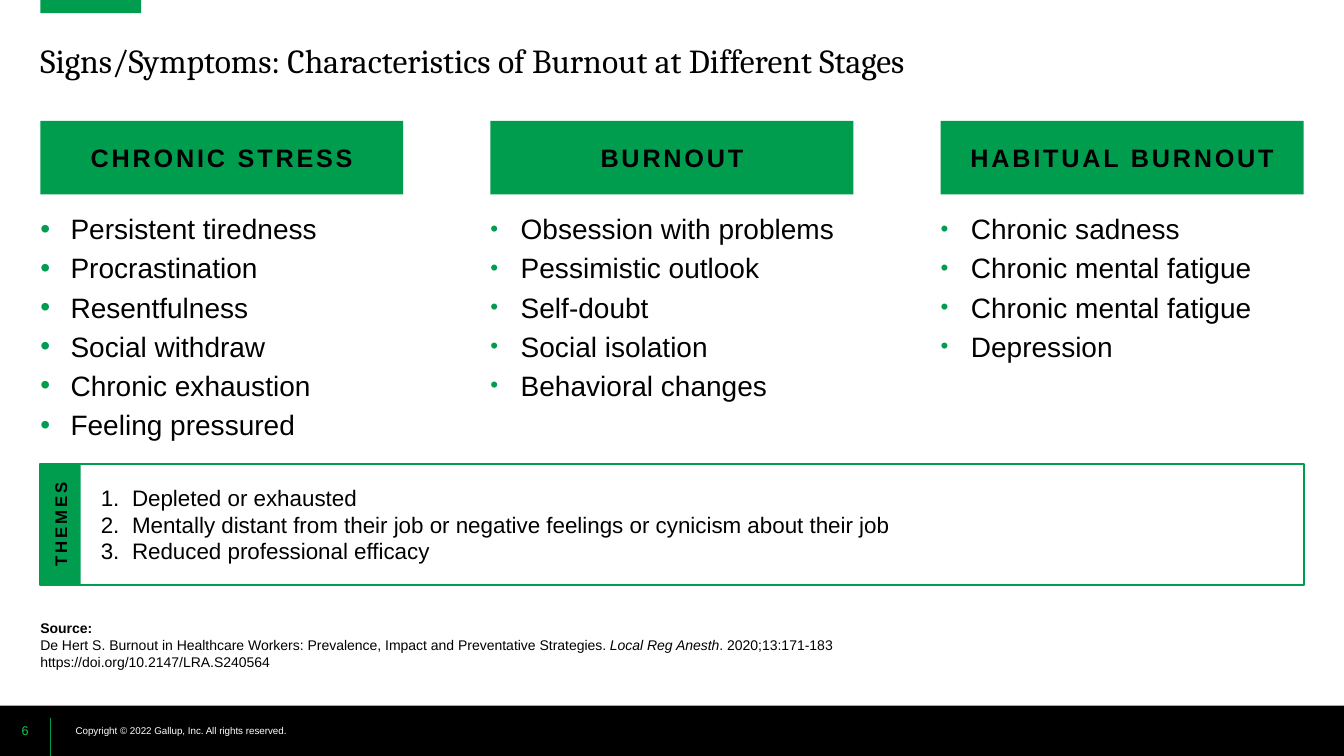
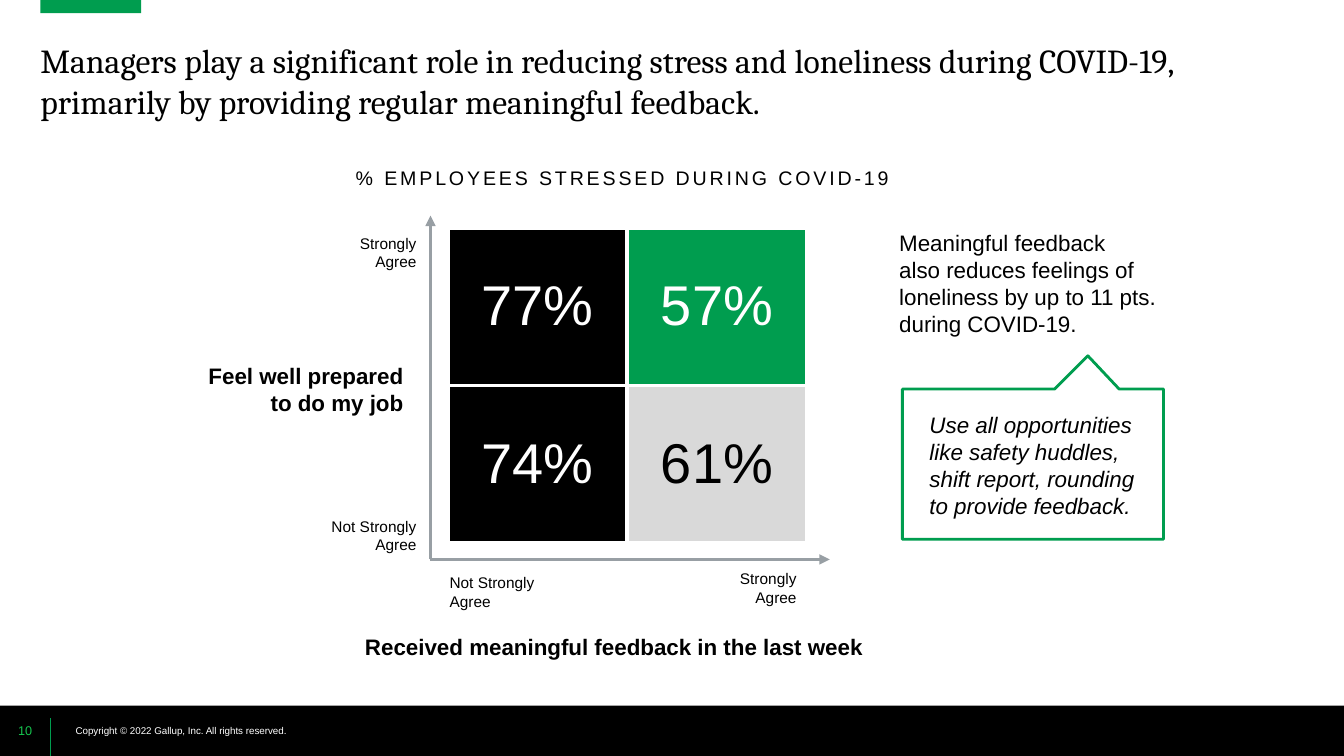
from dataclasses import dataclass

from lxml import etree
from pptx import Presentation
from pptx.dml.color import RGBColor
from pptx.enum.shapes import MSO_CONNECTOR, MSO_SHAPE
from pptx.enum.text import MSO_ANCHOR as Anchor, MSO_AUTO_SIZE as AutoSize, PP_ALIGN as Align
from pptx.oxml.ns import qn
from pptx.util import Inches, Pt


# Colours, fonts and type sizes
@dataclass(frozen=True)
class Theme:
    green: RGBColor = RGBColor(0x00, 0x9D, 0x4F)
    bright_green: RGBColor = RGBColor(0x16, 0xC6, 0x4F)
    black: RGBColor = RGBColor(0x00, 0x00, 0x00)
    white: RGBColor = RGBColor(0xFF, 0xFF, 0xFF)
    pale_grey: RGBColor = RGBColor(0xD9, 0xD9, 0xD9)
    axis_grey: RGBColor = RGBColor(0x98, 0x9F, 0xA4)
    heading_font: str = "Cambria"
    body_font: str = "Arial"
    title: int = 24
    figure: int = 40
    bullet: int = 20
    header: int = 18
    body: int = 16
    caption: int = 14
    tag: int = 12
    axis: int = 11
    source: int = 10
    number: int = 9
    copyright: int = 7


THEME = Theme()
WIDTH, HEIGHT = 13.33, 7.5
MARGIN, CONTENT_WIDTH = 0.4, 12.53
FOOTER_TOP, FOOTER_HEIGHT = 7, 0.5
NO_INSETS = (0, 0, 0, 0)


def add_xml(parent, tag, **attributes):
    child = etree.SubElement(parent, qn(tag))
    for key, value in attributes.items():
        child.set(key, str(value))
    return child


class Deck:
    """Holds the style and the current slide."""

    def __init__(self, theme):
        self.theme = theme
        self.prs = Presentation()
        self.prs.slide_width, self.prs.slide_height = Inches(WIDTH), Inches(HEIGHT)
        self.slide = None

    # Shared frame: accent tab, title and footer
    def new_slide(self, title, number):
        t = self.theme
        self.slide = self.prs.slides.add_slide(self.prs.slide_layouts[5])
        self.box((0, FOOTER_TOP, WIDTH, FOOTER_HEIGHT), t.black)
        self.text((0.75, FOOTER_TOP, 2.25, FOOTER_HEIGHT),
                  ["Copyright © 2022 Gallup, Inc. All rights reserved."], t.copyright,
                  anchor=Anchor.MIDDLE, insets=NO_INSETS, color=t.white)
        self.line((0.5, HEIGHT), (0.5, 7.12), t.green, 0.75)
        self.box((MARGIN, 0, 1, 0.13), t.green)
        heading = self.slide.shapes.title
        place = dict(left=MARGIN, top=0.4, width=CONTENT_WIDTH, height=0.4)
        for key, value in place.items():
            setattr(heading, key, Inches(value))
        self.fill_text(heading.text_frame, [title], t.title,
                       insets=NO_INSETS, name=t.heading_font)
        self.text((0, FOOTER_TOP, 0.5, FOOTER_HEIGHT), [number], t.number,
                  align=Align.CENTER, anchor=Anchor.MIDDLE, insets=NO_INSETS,
                  color=t.bright_green)

    # Text: each paragraph is a string or a list of (string, format) runs
    def fill_text(self, frame, paragraphs, size, align=Align.LEFT, anchor=Anchor.TOP,
                  insets=(0.1, 0.05, 0.1, 0.05), bullet=None, after=0, **fmt):
        frame.word_wrap = True
        frame.auto_size = AutoSize.NONE
        frame.vertical_anchor = anchor
        for side, inset in zip(("left", "top", "right", "bottom"), insets):
            setattr(frame, f"margin_{side}", Inches(inset))
        for index, content in enumerate(paragraphs):
            paragraph = frame.add_paragraph() if index else frame.paragraphs[0]
            self.fill_paragraph(paragraph, content, size, align, **fmt)
            if after:
                paragraph.space_after = Pt(after)
            if bullet:
                bullet(paragraph)

    def fill_paragraph(self, paragraph, content, size, align, **fmt):
        paragraph.alignment = align
        runs = [(content, {})] if isinstance(content, str) else content
        for words, own in runs:
            for index, line in enumerate(words.split("\n")):
                if index:
                    paragraph.add_line_break()
                run = paragraph.add_run()
                run.text = line
                self.format_run(run, size=Pt(size), **{**fmt, **own})

    def format_run(self, run, color=None, spacing=0, **fmt):
        values = {"name": self.theme.body_font, **fmt}
        for key, value in values.items():
            setattr(run.font, key, value)
        run.font.color.rgb = self.theme.black if color is None else color
        if spacing:
            run._r.get_or_add_rPr().set("spc", str(spacing * 100))

    def indent(self, paragraph, inches):
        properties = paragraph._p.get_or_add_pPr()
        properties.set("marL", str(Inches(inches)))
        properties.set("indent", str(-Inches(inches)))
        return properties

    def dots(self, percent):
        def apply(paragraph):
            properties = self.indent(paragraph, 0.3)
            add_xml(add_xml(properties, "a:buClr"), "a:srgbClr", val=self.theme.green)
            add_xml(properties, "a:buSzPct", val=percent * 1000)
            add_xml(properties, "a:buFont", typeface=self.theme.body_font)
            add_xml(properties, "a:buChar", char="•")
        return apply

    def numbers(self, paragraph):
        properties = self.indent(paragraph, 0.31)
        add_xml(properties, "a:buFont", typeface=self.theme.body_font)
        add_xml(properties, "a:buAutoNum", type="arabicPeriod")

    def text(self, at, paragraphs, size, **options):
        frame = self.slide.shapes.add_textbox(*map(Inches, at)).text_frame
        self.fill_text(frame, paragraphs, size, **options)

    # Shapes and lines
    def box(self, at, fill, outline=None, rotation=0):
        shape = self.slide.shapes.add_shape(MSO_SHAPE.RECTANGLE, *map(Inches, at))
        shape.rotation = rotation
        return self.paint(shape, fill, outline, 1.5)

    def paint(self, shape, fill, outline, weight):
        shape.shadow.inherit = False
        if fill is None:
            shape.fill.background()
        else:
            shape.fill.solid()
            shape.fill.fore_color.rgb = fill
        if outline is None:
            shape.line.fill.background()
        else:
            shape.line.color.rgb = outline
            shape.line.width = Pt(weight)
        return shape

    def label_box(self, at, label, size, rotation=0):
        shape = self.box(at, self.theme.green, rotation=rotation)
        self.fill_text(shape.text_frame, [label], size, align=Align.CENTER,
                       anchor=Anchor.MIDDLE, bold=True, spacing=2)

    def line(self, start, end, color, weight, arrow=False):
        connector = self.slide.shapes.add_connector(
            MSO_CONNECTOR.STRAIGHT, *map(Inches, (*start, *end)))
        connector.line.color.rgb = color
        connector.line.width = Pt(weight)
        if arrow:
            add_xml(connector.line._get_or_add_ln(), "a:tailEnd", type="triangle")
        add_xml(connector._element.spPr, "a:effectLst")

    def outline(self, points, color, weight):
        start, *rest = [tuple(map(Inches, point)) for point in points]
        builder = self.slide.shapes.build_freeform(*start, scale=1.0)
        builder.add_line_segments(rest, close=True)
        self.paint(builder.convert_to_shape(), None, color, weight)

    # Table of large figures with white gaps between cells
    def matrix(self, at, rows):
        table = self.slide.shapes.add_table(
            len(rows), len(rows[0]), *map(Inches, at)).table
        for flag in ("first_row", "horz_banding"):
            setattr(table, flag, False)
        for row_index, row in enumerate(rows):
            for column_index, (figure, fill, color) in enumerate(row):
                cell = table.cell(row_index, column_index)
                self.cell_borders(cell)
                cell.fill.solid()
                cell.fill.fore_color.rgb = fill
                cell.vertical_anchor = Anchor.MIDDLE
                self.fill_paragraph(cell.text_frame.paragraphs[0], figure,
                                    self.theme.figure, Align.CENTER, color=color)

    def cell_borders(self, cell):
        properties = cell._tc.get_or_add_tcPr()
        for side in "LRTB":
            border = add_xml(properties, f"a:ln{side}", w=Pt(3))
            add_xml(add_xml(border, "a:solidFill"), "a:srgbClr", val=self.theme.white)


def burnout_stages(deck):
    t = deck.theme
    deck.new_slide("Signs/Symptoms: Characteristics of Burnout at Different Stages", "6")

    # Stage columns
    stages = [
        ("CHRONIC STRESS", 100, ["Persistent tiredness", "Procrastination", "Resentfulness",
                                 "Social withdraw", "Chronic exhaustion", "Feeling pressured"]),
        ("BURNOUT", 80, ["Obsession with problems", "Pessimistic outlook", "Self-doubt",
                         "Social isolation", "Behavioral changes"]),
        ("HABITUAL BURNOUT", 80, ["Chronic sadness", "Chronic mental fatigue",
                                  "Chronic mental fatigue", "Depression"]),
    ]
    stage_width = 3.6
    step = (CONTENT_WIDTH - stage_width) / (len(stages) - 1)
    for index, (stage, dot_percent, symptoms) in enumerate(stages):
        left = MARGIN + index * step
        deck.label_box((left, 1.2, stage_width, 0.73), stage, t.header)
        deck.text((left, 2.1, stage_width, 2.23), symptoms, t.bullet,
                  insets=NO_INSETS, bullet=deck.dots(dot_percent), after=4)

    # Source
    citation = [
        ("De Hert S. Burnout in Healthcare Workers: Prevalence, Impact and "
         "Preventative Strategies. ", {}),
        ("Local Reg Anesth", {"italic": True}),
        (". 2020;13:171-183\nhttps://doi.org/10.2147/LRA.S240564", {}),
    ]
    deck.text((MARGIN, 6.15, CONTENT_WIDTH, 0.5), [[("Source:", {"bold": True})], citation],
              t.source, anchor=Anchor.BOTTOM, insets=NO_INSETS)

    # Themes panel with its upright tag
    top, height, tag = 4.6, 1.2, 0.4
    panel = deck.box((MARGIN, top, CONTENT_WIDTH, height), t.white, t.green)
    themes = ["Depleted or exhausted",
              "Mentally distant from their job or negative feelings or cynicism about their job",
              "Reduced professional efficacy"]
    deck.fill_text(panel.text_frame, themes, t.body, anchor=Anchor.MIDDLE,
                   insets=(0.6, 0.2, 0.25, 0.2), bullet=deck.numbers)
    deck.label_box((MARGIN + (tag - height) / 2, top + (height - tag) / 2, height, tag),
                   "THEMES", t.tag, rotation=270)


def manager_feedback(deck):
    t = deck.theme
    deck.new_slide("Managers play a significant role in reducing stress and loneliness during "
                   "COVID-19, primarily by providing regular meaningful feedback.", "10")

    # Stress matrix and its axes
    deck.text((3.43, 1.6, 5.7, 0.34), ["% EMPLOYEES STRESSED DURING COVID-19"],
              t.caption, spacing=2)
    deck.matrix((4.44, 2.26, 3.56, 3.13), [
        [("77%", t.black, t.white), ("57%", t.green, t.white)],
        [("74%", t.black, t.white), ("61%", t.pale_grey, t.black)],
    ])
    origin = (4.27, 5.55)
    for axis_end in ((8.23, 5.55), (4.27, 2.14)):
        deck.line(origin, axis_end, t.axis_grey, 2.5, arrow=True)

    # Axis ends and names
    axis_ends = [
        ((3.09, 2.27, 1.14, 0.47), "Strongly Agree", Align.RIGHT),
        ((3.16, 5.08, 1.07, 0.47), "Not Strongly Agree", Align.RIGHT),
        ((6.97, 5.6, 1.03, 0.47), "Strongly Agree", Align.RIGHT),
        ((4.36, 5.64, 1.38, 0.47), "Not Strongly Agree", Align.LEFT),
    ]
    for at, label, align in axis_ends:
        deck.text(at, [label], t.axis, align=align)
    deck.text((1.75, 3.54, 2.35, 0.64), ["Feel well prepared to do my job"], t.body,
              align=Align.RIGHT, bold=True)
    deck.text((3.5, 6.23, 5.18, 0.37), ["Received meaningful feedback in the last week"],
              t.body, align=Align.CENTER, bold=True)

    # Takeaway and callout
    deck.text((8.82, 2.06, 2.84, 1.49),
              ["Meaningful feedback\nalso reduces feelings of loneliness by up to 11 pts. "
               "during COVID-19."], t.body, anchor=Anchor.MIDDLE)
    left, right, top, bottom = 8.95, 11.54, 3.86, 5.35
    deck.outline([(left, bottom), (left, top), (10.46, top), (10.79, 3.53), (11.1, top),
                  (right, top), (right, bottom)], t.green, 2)
    deck.text((9.12, 4.03, 2.42, 1.18),
              ["Use all opportunities like safety huddles,\nshift report, rounding\n"
               "to provide feedback."], t.body, italic=True)


def main():
    deck = Deck(THEME)
    burnout_stages(deck)
    manager_feedback(deck)
    deck.prs.save("out.pptx")


if __name__ == "__main__":
    main()
